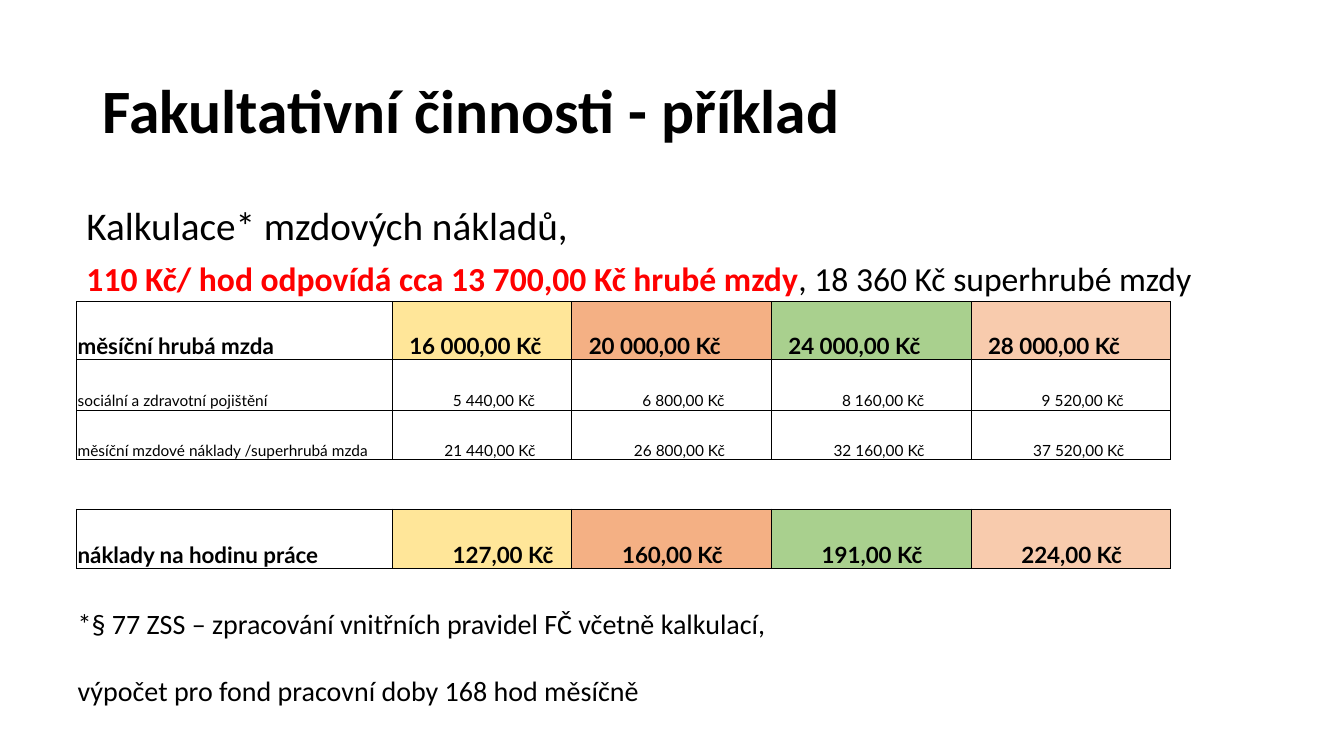
from dataclasses import dataclass

from lxml.etree import SubElement
from pptx import Presentation
from pptx.dml.color import RGBColor
from pptx.enum.text import MSO_ANCHOR, PP_ALIGN
from pptx.oxml.ns import qn
from pptx.slide import Slide
from pptx.table import Table, _Cell
from pptx.text.text import Font, TextFrame
from pptx.util import Inches, Pt

BLACK = "000000"
RED = "FF0000"
COLUMN_FILLS = ("FFE699", "F4B084", "A9D08E", "F8CBAD")
COLUMN_WIDTHS = (3.13, 1.78, 1.98, 1.98, 1.98)
CELL_MARGIN = 0.01
NOTE_LINES = (
    "*§ 77 ZSS – zpracování vnitřních pravidel FČ včetně kalkulací,",
    "výpočet pro fond pracovní doby 168 hod měsíčně",
)


@dataclass(frozen=True)
class CostRow:
    """A row of amounts; insets are the left margins of the four amounts."""
    height: float
    label: str = ""
    amounts: tuple[str, ...] = ("",) * 4
    insets: tuple[float, ...] = (CELL_MARGIN,) * 4
    highlighted: bool = False
    borders: str = "LRTB"


COST_ROWS = (
    CostRow(0.57, "měsíční hrubá mzda",
            ("16 000,00 Kč", "20 000,00 Kč", "24 000,00 Kč", "28 000,00 Kč"),
            (0.17,) * 4, highlighted=True),
    CostRow(0.51, "sociální a zdravotní pojištění",
            ("5 440,00 Kč", "6 800,00 Kč", "8 160,00 Kč", "9 520,00 Kč"),
            (0.25,) * 4),
    CostRow(0.49, "měsíční mzdové náklady /superhrubá mzda",
            ("21 440,00 Kč", "26 800,00 Kč", "32 160,00 Kč", "37 520,00 Kč"),
            (0.17,) * 4),
    CostRow(0.49, borders="TB"),
    CostRow(0.59, "náklady na hodinu práce",
            ("127,00 Kč", "160,00 Kč", "191,00 Kč", "224,00 Kč"),
            (0.6, 0.5, 0.5, 0.5), highlighted=True),
)
NOTE_ROW_HEIGHT = 1.4


def color(value: str) -> RGBColor:
    return RGBColor.from_string(value)


def set_font(font: Font, size: float, bold: bool = False,
             name: str = "Calibri", value: str = BLACK) -> None:
    font.name, font.size, font.bold = name, Pt(size), bold
    font.color.rgb = color(value)


def add_text_frame(slide: Slide, left: float, top: float, width: float,
                   height: float, anchor: MSO_ANCHOR) -> TextFrame:
    box = slide.shapes.add_textbox(Inches(left), Inches(top),
                                   Inches(width), Inches(height))
    box.text_frame.word_wrap = True
    box.text_frame.vertical_anchor = anchor
    return box.text_frame


def add_title(slide: Slide) -> None:
    frame = add_text_frame(slide, 0.92, 0.4, 11.5, 1.45, MSO_ANCHOR.MIDDLE)
    paragraph = frame.paragraphs[0]
    paragraph.text = "Fakultativní činnosti - příklad"
    paragraph.line_spacing = 0.9
    set_font(paragraph.font, 44, bold=True)


def add_introduction(slide: Slide) -> None:
    frame = add_text_frame(slide, 0.76, 2, 11.66, 0.99, MSO_ANCHOR.TOP)
    heading, wage = frame.paragraphs[0], frame.add_paragraph()
    for paragraph in (heading, wage):
        paragraph.line_spacing = 0.9
        paragraph.space_before = Pt(10)
    heading.text = "Kalkulace* mzdových nákladů,"
    set_font(heading.font, 28)
    for text, bold, value in (
        ("110 Kč/ hod odpovídá cca 13 700,00 Kč hrubé mzdy", True, RED),
        (", 18 360 Kč superhrubé mzdy", False, BLACK),
    ):
        run = wage.add_run()
        run.text = text
        set_font(run.font, 24, bold, value=value)


def style_cell(cell: _Cell, borders: str, fill: str | None = None,
               inset: float = CELL_MARGIN) -> None:
    cell.vertical_anchor = MSO_ANCHOR.BOTTOM
    cell.margin_left = Inches(inset)
    cell.margin_right = cell.margin_top = Inches(CELL_MARGIN)
    cell.margin_bottom = Inches(0)
    properties = cell._tc.get_or_add_tcPr()
    for side in "LRTB":
        line = SubElement(properties, qn(f"a:ln{side}"), w=str(Pt(0.5)))
        if side in borders:
            solid = SubElement(line, qn("a:solidFill"))
            SubElement(solid, qn("a:srgbClr"), val=BLACK)
        else:
            SubElement(line, qn("a:noFill"))
    if fill:
        cell.fill.solid()
        cell.fill.fore_color.rgb = color(fill)
    else:
        cell.fill.background()


def fill_cost_row(table: Table, index: int, row: CostRow) -> None:
    texts = (row.label, *row.amounts)
    insets = (CELL_MARGIN, *row.insets)
    fills = (None, *COLUMN_FILLS) if row.highlighted else (None,) * 5
    for column, (text, inset, fill) in enumerate(zip(texts, insets, fills)):
        cell = table.cell(index, column)
        style_cell(cell, row.borders, fill, inset)
        paragraph = cell.text_frame.paragraphs[0]
        paragraph.text = text
        centred = column > 0 and not row.highlighted
        paragraph.alignment = PP_ALIGN.CENTER if centred else PP_ALIGN.LEFT
        set_font(paragraph.font, 16 if row.highlighted else 11,
                 row.highlighted, "Lato")


def fill_note_row(table: Table, index: int) -> None:
    last_column = len(COLUMN_WIDTHS) - 1
    for column in range(last_column + 1):
        style_cell(table.cell(index, column), "T")
    note = table.cell(index, 0)
    note.merge(table.cell(index, last_column))
    note.text_frame.text = "\n".join(NOTE_LINES)
    for paragraph in note.text_frame.paragraphs:
        set_font(paragraph.font, 20)
    note.text_frame.paragraphs[1].space_before = Pt(24)


def add_cost_table(slide: Slide) -> None:
    heights = [row.height for row in COST_ROWS] + [NOTE_ROW_HEIGHT]
    table = slide.shapes.add_table(
        len(heights), len(COLUMN_WIDTHS), Inches(0.76), Inches(2.99),
        Inches(sum(COLUMN_WIDTHS)), Inches(sum(heights))).table
    table.first_row = table.horz_banding = False
    for column, width in zip(table.columns, COLUMN_WIDTHS):
        column.width = Inches(width)
    for table_row, height in zip(table.rows, heights):
        table_row.height = Inches(height)
    for index, row in enumerate(COST_ROWS):
        fill_cost_row(table, index, row)
    fill_note_row(table, len(COST_ROWS))


def main() -> None:
    presentation = Presentation()
    presentation.slide_width = Inches(13.33)
    presentation.slide_height = Inches(7.5)
    slide = presentation.slides.add_slide(presentation.slide_layouts[6])
    add_title(slide)
    add_introduction(slide)
    add_cost_table(slide)
    presentation.save("out.pptx")


if __name__ == "__main__":
    main()
